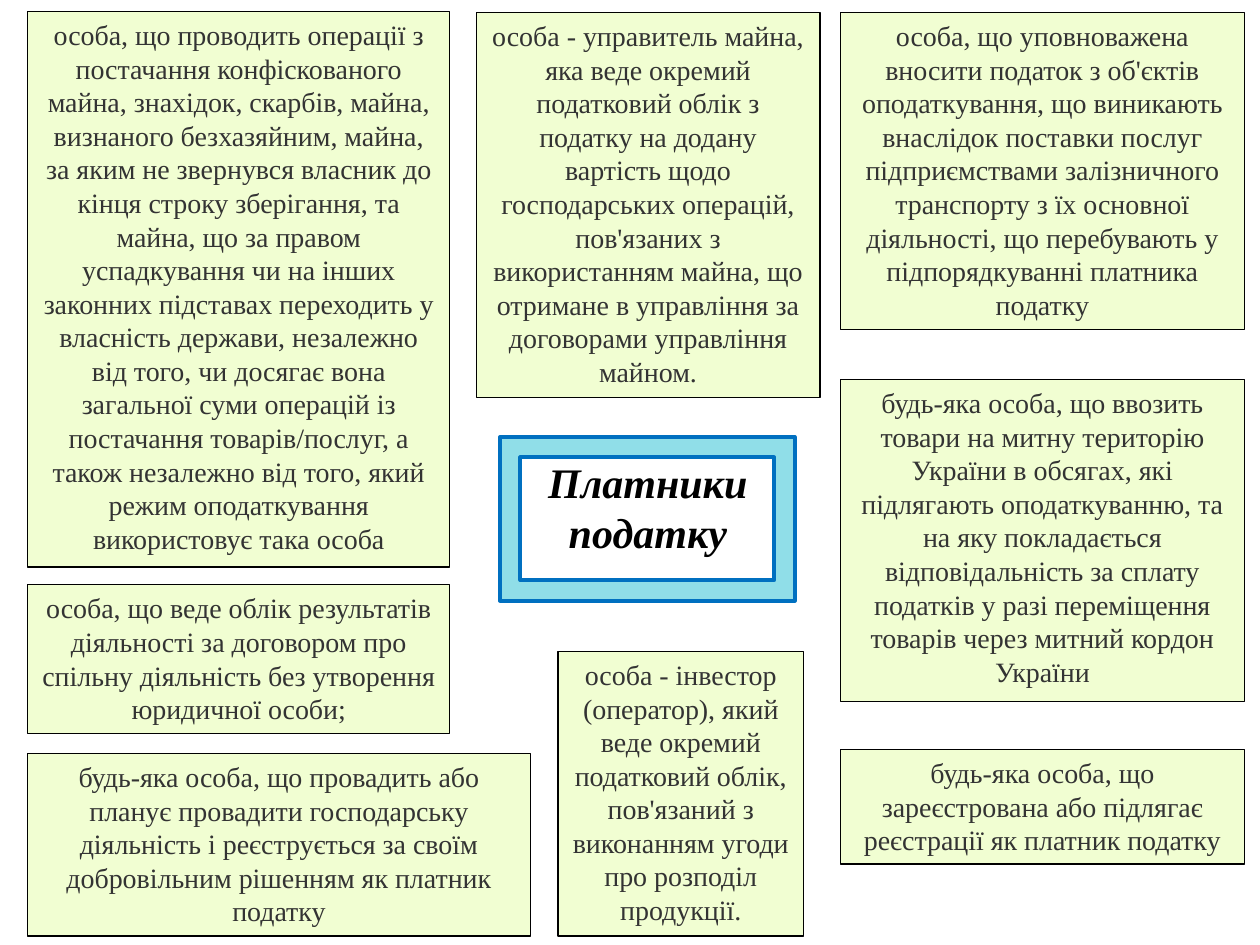
import pptx
import pptx.dml.color
import pptx.enum.shapes
import pptx.enum.text
import pptx.util
from pptx.util import Cm

COLORS = {
    "card": "F1FED2",
    "card_line": "000000",
    "card_text": "333333",
    "frame": "90DEE8",
    "frame_line": "0070C0",
    "title": "000000",
}

LEFT_CARDS = [
    (0, 8.51, 11.2, ["особа, що проводить операції з постачання конфіскованого майна, "
                     "знахідок, скарбів, майна, визнаного безхазяйним, майна, за яким не "
                     "звернувся власник до кінця строку зберігання, та майна, що за правом "
                     "успадкування чи на інших законних підставах переходить у власність "
                     "держави, незалежно від того, чи досягає вона загальної суми операцій "
                     "із постачання товарів/послуг, а також незалежно від того, який режим "
                     "оподаткування використовує така особа"]),
    (11.56, 8.51, 3, ["особа, що веде облік результатів діяльності за договором про "
                      "спільну діяльність без утворення юридичної особи;"]),
    (14.96, 10.13, 3.68, ["будь-яка особа, що провадить або планує провадити господарську "
                          "діяльність і реєструється за своїм добровільним рішенням як "
                          "платник податку"]),
]
RIGHT_CARDS = [
    (0, 8.15, 6.4, ["особа, що уповноважена вносити податок з об'єктів оподаткування, що "
                    "виникають внаслідок поставки послуг підприємствами залізничного "
                    "транспорту з їх основної діяльності, що перебувають у "
                    "підпорядкуванні платника податку"]),
    (7.4, 8.15, 6.5, ["будь-яка особа, що ввозить товари на митну територію України в "
                      "обсягах, які підлягають оподаткуванню, та на яку покладається "
                      "відповідальність за сплату податків у разі переміщення товарів "
                      "через митний кордон", "України"]),
    (14.86, 8.15, 2.31, ["будь-яка особа, що зареєстрована або підлягає реєстрації як "
                         "платник податку"]),
]
MANAGER = ["особа - управитель майна, яка веде окремий податковий облік з податку на "
           "додану вартість щодо господарських операцій, пов'язаних з використанням "
           "майна, що отримане в управління за договорами управління майном."]
INVESTOR = ["особа - інвестор (оператор), який веде окремий податковий облік, пов'язаний "
            "з виконанням угоди про розподіл продукції."]


def rgb(name):
    """Return the named colour."""
    return pptx.dml.color.RGBColor.from_string(COLORS[name])


def write_text(shape, paragraphs, *, size, color, bold=False, italic=False,
               anchor=pptx.enum.text.MSO_ANCHOR.TOP):
    """Fill a shape with centred, wrapped paragraphs in one format."""
    frame = shape.text_frame
    frame.word_wrap = True
    frame.auto_size = pptx.enum.text.MSO_AUTO_SIZE.SHAPE_TO_FIT_TEXT
    frame.vertical_anchor = anchor
    for index, text in enumerate(paragraphs):
        paragraph = frame.add_paragraph() if index else frame.paragraphs[0]
        paragraph.alignment = pptx.enum.text.PP_ALIGN.CENTER
        run = paragraph.add_run()
        run.text = text
        run.font.name = "Times New Roman"
        run.font.size = pptx.util.Pt(size)
        run.font.bold = bold
        run.font.italic = italic
        run.font.color.rgb = rgb(color)


def add_outlined_shape(shapes, kind, box, fill, line, width):
    """Add a filled preset shape with an outline and no shadow."""
    shape = shapes.add_shape(kind, *map(Cm, box))
    shape.shadow.inherit = False
    shape.fill.solid()
    shape.fill.fore_color.rgb = rgb(fill)
    shape.line.color.rgb = rgb(line)
    shape.line.width = pptx.util.Pt(width)
    return shape


def add_card(slide, box, paragraphs):
    """Add one taxpayer card."""
    card = add_outlined_shape(slide.shapes, pptx.enum.shapes.MSO_SHAPE.RECTANGLE,
                              box, "card", "card_line", 0.75)
    write_text(card, paragraphs, size=16, color="card_text")


def add_column(slide, left, top, cards):
    """Stack cards below a top left corner."""
    for offset, width, height, paragraphs in cards:
        add_card(slide, (left, top + offset, width, height), paragraphs)


def add_title(slide, left, top, width, height):
    """Add the framed title as a group."""
    group = slide.shapes.add_group_shape()
    add_outlined_shape(group.shapes, pptx.enum.shapes.MSO_SHAPE.FRAME,
                       (left, top, width, height), "frame", "frame_line", 2.25)
    label = group.shapes.add_textbox(Cm(left + 0.15), Cm(top + 0.25),
                                     Cm(width - 0.28), Cm(height - 0.99))
    write_text(label, ["Платники податку"], size=24, color="title", bold=True,
               italic=True, anchor=pptx.enum.text.MSO_ANCHOR.MIDDLE)


def main():
    """Build and save the presentation."""
    presentation = pptx.Presentation()
    presentation.slide_width = Cm(25.4)
    presentation.slide_height = Cm(19.05)
    slide = presentation.slides.add_slide(presentation.slide_layouts[6])
    add_title(slide, 10.08, 8.81, 5.94, 3.3)
    add_column(slide, 0.56, 0.23, LEFT_CARDS)
    add_card(slide, (9.6, 0.25, 6.93, 7.77), MANAGER)
    add_card(slide, (11.25, 13.13, 4.95, 5.74), INVESTOR)
    add_column(slide, 16.94, 0.25, RIGHT_CARDS)
    presentation.save("out.pptx")


if __name__ == "__main__":
    main()
